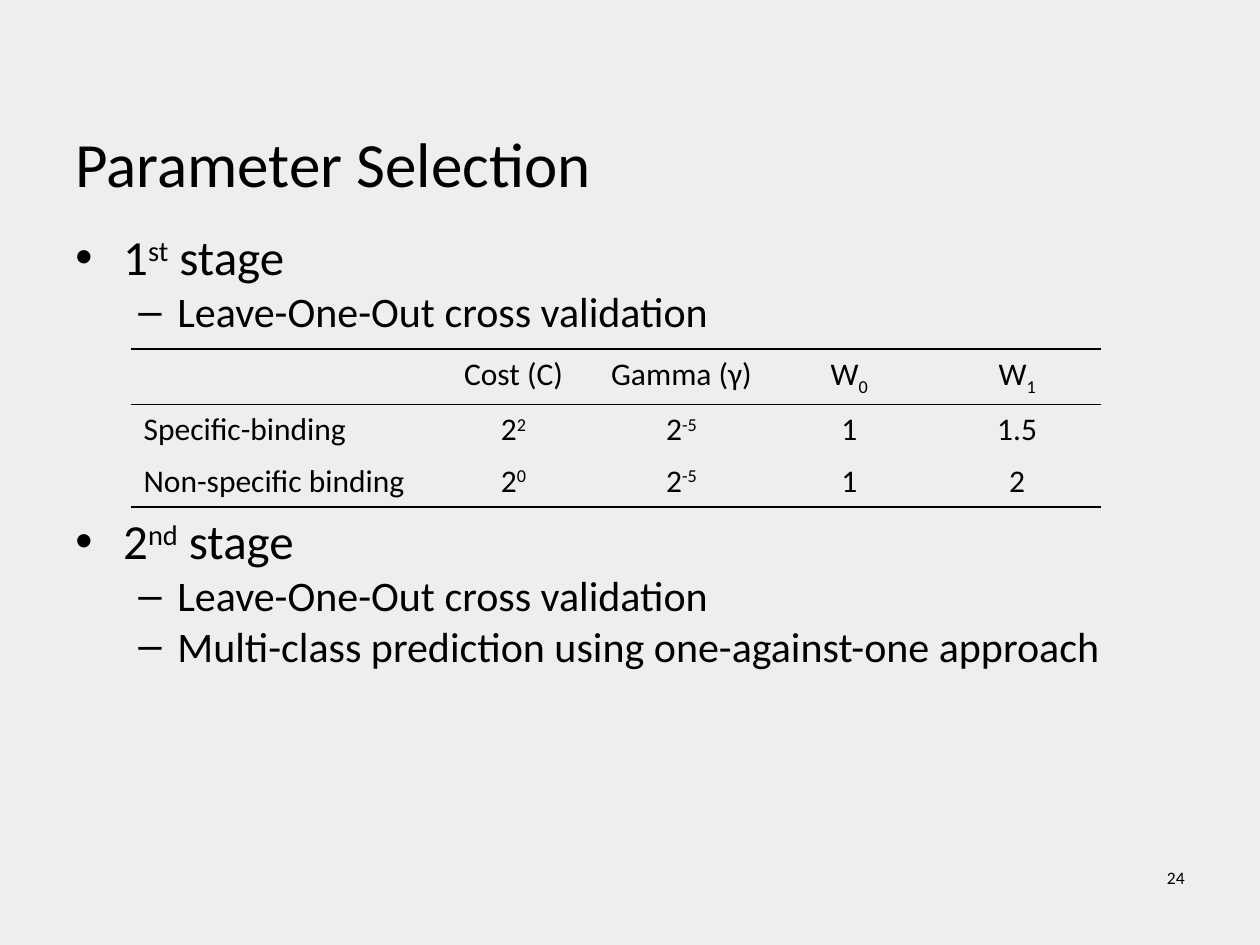
from lxml.etree import SubElement
from pptx import Presentation
from pptx.dml.color import RGBColor
from pptx.enum.text import MSO_ANCHOR, PP_ALIGN
from pptx.oxml.ns import qn
from pptx.util import Inches, Pt

FONT = "Calibri"
INK = "000000"
BACKGROUND = "EEEEEE"
SUPER, SUB = 30000, -25000

# Bullet level: (character, left margin, hanging indent, text size)
LEVELS = [("•", 0.38, -0.38, 28), ("–", 0.81, -0.31, 24)]
STAGE_GAP = 100  # points left free for the table

# A text is a list of (words, baseline shift) pieces.
BULLETS = [
    (0, [("1", 0), ("st", SUPER), (" stage", 0)], 0),
    (1, [("Leave-One-Out cross validation", 0)], 0),
    (0, [("2", 0), ("nd", SUPER), (" stage", 0)], STAGE_GAP),
    (1, [("Leave-One-Out cross validation", 0)], 0),
    (1, [("Multi-class prediction using one-against-one approach", 0)], 0),
]
PARAMETERS = [
    [[], [("Cost (C)", 0)], [("Gamma (γ)", 0)],
     [("W", 0), ("0", SUB)], [("W", 0), ("1", SUB)]],
    [[("Specific-binding", 0)], [("2", 0), ("2", SUPER)],
     [("2", 0), ("-5", SUPER)], [("1", 0)], [("1.5", 0)]],
    [[("Non-specific binding", 0)], [("2", 0), ("0", SUPER)],
     [("2", 0), ("-5", SUPER)], [("1", 0)], [("2", 0)]],
]


def color(hex_string):
    return RGBColor.from_string(hex_string)


def write(paragraph, pieces, size):
    for words, baseline in pieces:
        run = paragraph.add_run()
        run.text = words
        run.font.name = FONT
        run.font.size = Pt(size)
        run.font.color.rgb = color(INK)
        if baseline:
            run._r.get_or_add_rPr().set("baseline", str(baseline))


def add_text_frame(slide, left, top, width, height, anchor=MSO_ANCHOR.TOP):
    box = slide.shapes.add_textbox(Inches(left), Inches(top), Inches(width), Inches(height))
    text_frame = box.text_frame
    text_frame.word_wrap = True
    text_frame.vertical_anchor = anchor
    return text_frame


def add_title(slide, left, top, width, height):
    text_frame = add_text_frame(slide, left, top, width, height, MSO_ANCHOR.BOTTOM)
    write(text_frame.paragraphs[0], [("Parameter Selection", 0)], 36)


def set_bullet(paragraph, character, margin, indent):
    properties = paragraph._p.get_or_add_pPr()
    properties.set("marL", str(Inches(margin)))
    properties.set("indent", str(Inches(indent)))
    SubElement(properties, qn("a:buFont"), typeface="Arial")
    SubElement(properties, qn("a:buChar"), char=character)


def add_bullets(slide, left, top, width, height):
    text_frame = add_text_frame(slide, left, top, width, height)
    for index, (level, pieces, space_before) in enumerate(BULLETS):
        paragraph = text_frame.paragraphs[0] if index == 0 else text_frame.add_paragraph()
        character, margin, indent, size = LEVELS[level]
        paragraph.level = level
        if space_before:
            paragraph.space_before = Pt(space_before)
        set_bullet(paragraph, character, margin, indent)
        write(paragraph, pieces, size)


def set_borders(cell, ruled_sides):
    """Rule the given sides (of L, R, T, B) and clear the others."""
    properties = cell._tc.get_or_add_tcPr()
    for side in "LRTB":
        line = SubElement(properties, qn(f"a:ln{side}"), w=str(Pt(1)))
        if side in ruled_sides:
            fill = SubElement(line, qn("a:solidFill"))
            SubElement(fill, qn("a:srgbClr"), val=INK)
        else:
            SubElement(line, qn("a:noFill"))


def add_parameter_table(slide, left, top, width, height):
    row_count, column_count = len(PARAMETERS), len(PARAMETERS[0])
    table = slide.shapes.add_table(row_count, column_count, Inches(left), Inches(top),
                                   Inches(width), Inches(height)).table
    table.first_row = table.horz_banding = False
    label_width = 2.37
    for index, column in enumerate(table.columns):
        value_width = (width - label_width) / (column_count - 1)
        column.width = Inches(value_width if index else label_width)
    rules = ["TB", "T", "B"]
    for row_index, row in enumerate(PARAMETERS):
        for column_index, pieces in enumerate(row):
            cell = table.cell(row_index, column_index)
            set_borders(cell, rules[row_index])
            cell.fill.background()
            paragraph = cell.text_frame.paragraphs[0]
            paragraph.font.size = Pt(18)
            if column_index:
                paragraph.alignment = PP_ALIGN.CENTER
            write(paragraph, pieces, 18)


def add_slide_number(slide, left, top, width, height):
    paragraph = add_text_frame(slide, left, top, width, height).paragraphs[0]
    paragraph.alignment = PP_ALIGN.RIGHT
    write(paragraph, [("24", 0)], 10)


def main():
    presentation = Presentation()
    presentation.slide_width, presentation.slide_height = Inches(10), Inches(7.5)
    slide = presentation.slides.add_slide(presentation.slide_layouts[6])
    slide.background.fill.solid()
    slide.background.fill.fore_color.rgb = color(BACKGROUND)
    add_bullets(slide, 0.5, 1.75, 9, 4.95)
    add_title(slide, 0.5, 0.39, 9, 1.25)
    add_slide_number(slide, 7.17, 6.83, 2.33, 0.52)
    add_parameter_table(slide, 1.04, 2.77, 7.7, 1.22)
    presentation.save("out.pptx")


if __name__ == "__main__":
    main()
